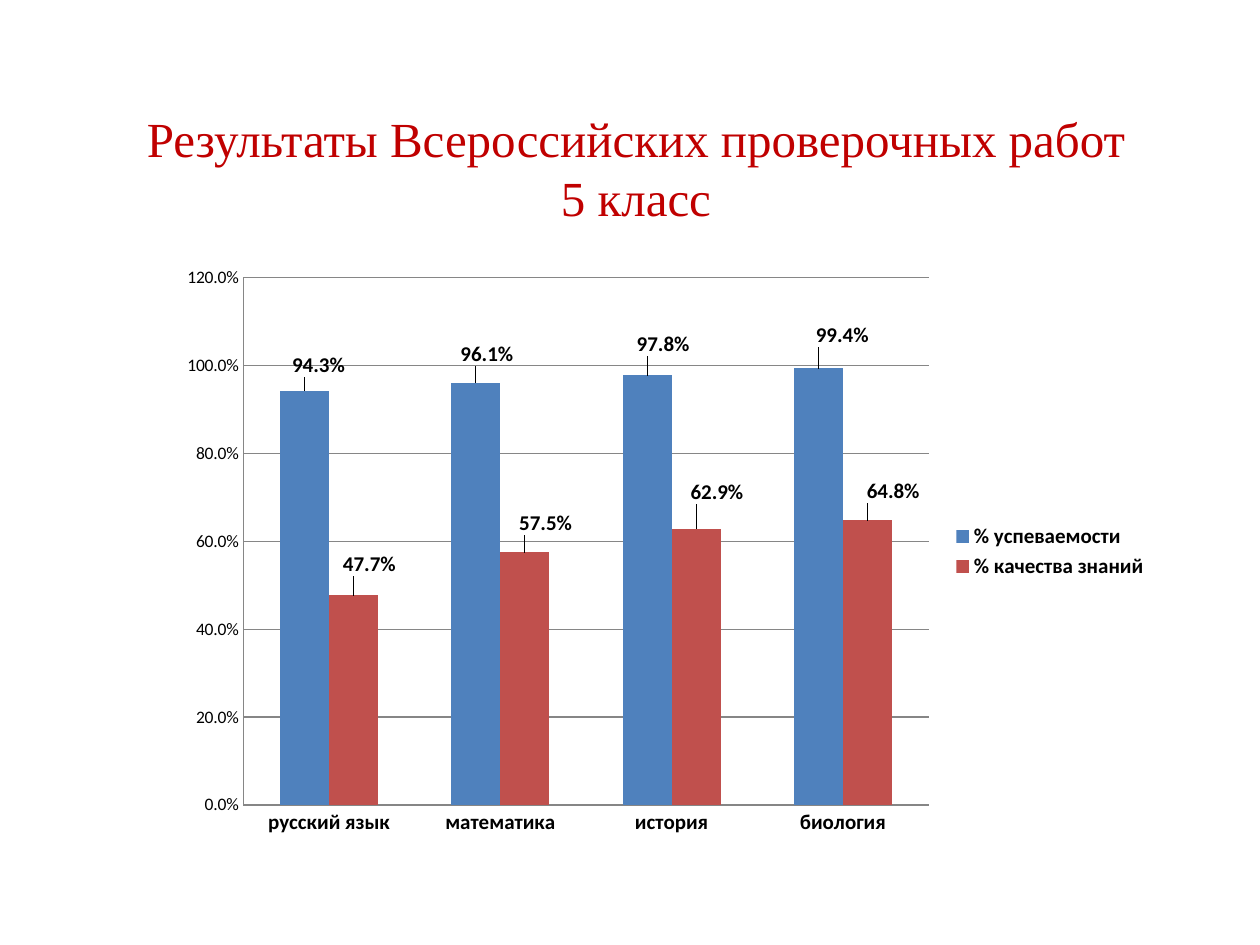
from lxml.etree import SubElement
from pptx import Presentation
from pptx.chart.data import CategoryChartData
from pptx.dml.color import RGBColor
from pptx.enum.chart import XL_CHART_TYPE, XL_LABEL_POSITION, XL_LEGEND_POSITION, XL_TICK_MARK
from pptx.enum.text import MSO_ANCHOR, PP_ALIGN
from pptx.oxml.ns import qn
from pptx.util import Pt

EMU_PER_PX = 914400 / 126
CHART_WIDTH, CHART_HEIGHT = 993, 591
DARK_RED = RGBColor(0xC0, 0x00, 0x00)
BLUE = RGBColor(0x4F, 0x81, 0xBD)
RED = RGBColor(0xC0, 0x50, 0x4D)
GRAY = RGBColor(0x86, 0x86, 0x86)
BLACK = RGBColor(0x00, 0x00, 0x00)
PERCENT = "0.0%"
SUBJECTS = ["русский язык", "математика", "история", "биология"]
RESULTS = [
    ("% успеваемости", [0.943, 0.961, 0.978, 0.994], BLUE,
     [(14, -8), (11, -11), (16, -14), (24, -16)]),
    ("% качества знаний", [0.477, 0.575, 0.629, 0.648], RED,
     [(16, -14), (21, -12), (21, -19), (26, -12)]),
]


def px(length):
    return round(length * EMU_PER_PX)


def style_font(font, size, color=BLACK, name="Calibri", bold=False):
    font.size = Pt(size)
    font.name = name
    font.bold = bold
    font.color.rgb = color


def add_text(slide, text, left, top, width, height, **font_format):
    box = slide.shapes.add_textbox(px(left), px(top), px(width), px(height))
    frame = box.text_frame
    frame.word_wrap = True
    frame.vertical_anchor = MSO_ANCHOR.MIDDLE
    paragraph = frame.paragraphs[0]
    paragraph.text = text
    paragraph.alignment = PP_ALIGN.CENTER
    for run in paragraph.runs:
        style_font(run.font, **font_format)


def fill_layout(layout, **settings):
    manual = SubElement(layout, qn("c:manualLayout"))
    for tag, value in settings.items():
        SubElement(manual, qn(f"c:{tag}")).set("val", str(value))


def place_plot(chart, left, top, width, height):
    plot_area = chart.plots[0]._element.getparent()
    layout = plot_area.find(qn("c:layout"))
    if layout is None:
        layout = SubElement(plot_area, qn("c:layout"))
        plot_area.insert(0, layout)
    fill_layout(layout, layoutTarget="inner", xMode="edge", yMode="edge",
                x=round(left / CHART_WIDTH, 3), y=round(top / CHART_HEIGHT, 3),
                w=round(width / CHART_WIDTH, 3), h=round(height / CHART_HEIGHT, 3))


def style_axis(axis, **font_format):
    style_font(axis.tick_labels.font, **font_format)
    axis.major_tick_mark = XL_TICK_MARK.NONE
    axis.minor_tick_mark = XL_TICK_MARK.NONE
    axis.format.line.color.rgb = GRAY
    axis.format.line.width = Pt(0.75)


def style_series(series, color, label_shifts):
    series.format.fill.solid()
    series.format.fill.fore_color.rgb = color
    series.invert_if_negative = False
    labels = series.data_labels
    labels.show_value = True
    labels.number_format = PERCENT
    labels.number_format_is_linked = False
    labels.position = XL_LABEL_POSITION.OUTSIDE_END
    style_font(labels.font, 12, bold=True)
    for index in range(len(label_shifts)):
        label = series.points[index].data_label
        style_font(label.font, 12, bold=True)
        label.position = XL_LABEL_POSITION.OUTSIDE_END
    for label, (right, down) in zip(series._element.iter(qn("c:dLbl")), label_shifts):
        layout = SubElement(label, qn("c:layout"))
        label.insert(1, layout)
        fill_layout(layout, x=round(right / CHART_WIDTH, 3), y=round(down / CHART_HEIGHT, 3))


def add_results_chart(slide, left, top):
    data = CategoryChartData(number_format=PERCENT)
    data.categories = SUBJECTS
    for name, values, _, _ in RESULTS:
        data.add_series(name, values)
    chart = slide.shapes.add_chart(
        XL_CHART_TYPE.COLUMN_CLUSTERED, px(left), px(top),
        px(CHART_WIDTH), px(CHART_HEIGHT), data).chart
    chart.has_title = False
    style_font(chart.font, 10)
    plot = chart.plots[0]
    plot.gap_width = 150
    plot.overlap = 0
    plot.vary_by_categories = False
    for series, (_, _, color, shifts) in zip(plot.series, RESULTS):
        style_series(series, color, shifts)
    style_axis(chart.category_axis, size=12, bold=True)
    values = chart.value_axis
    style_axis(values, size=10)
    values.minimum_scale, values.maximum_scale, values.major_unit = 0, 1.2, 0.2
    values.tick_labels.number_format = PERCENT
    values.tick_labels.number_format_is_linked = False
    values.major_gridlines.format.line.color.rgb = GRAY
    values.major_gridlines.format.line.width = Pt(0.75)
    chart.has_legend = True
    chart.legend.position = XL_LEGEND_POSITION.RIGHT
    chart.legend.include_in_layout = False
    style_font(chart.legend.font, 12, bold=True)
    place_plot(chart, 75, 22, 685, 527)


def main():
    presentation = Presentation()
    presentation.slide_width = px(1260)
    presentation.slide_height = px(945)
    slide = presentation.slides.add_slide(presentation.slide_layouts[6])
    add_text(slide, "Результаты Всероссийских проверочных работ\v5 класс",
             69, 88, 1134, 158, size=28, color=DARK_RED, name="Times New Roman")
    add_results_chart(slide, 168, 256)
    presentation.save("out.pptx")


if __name__ == "__main__":
    main()
